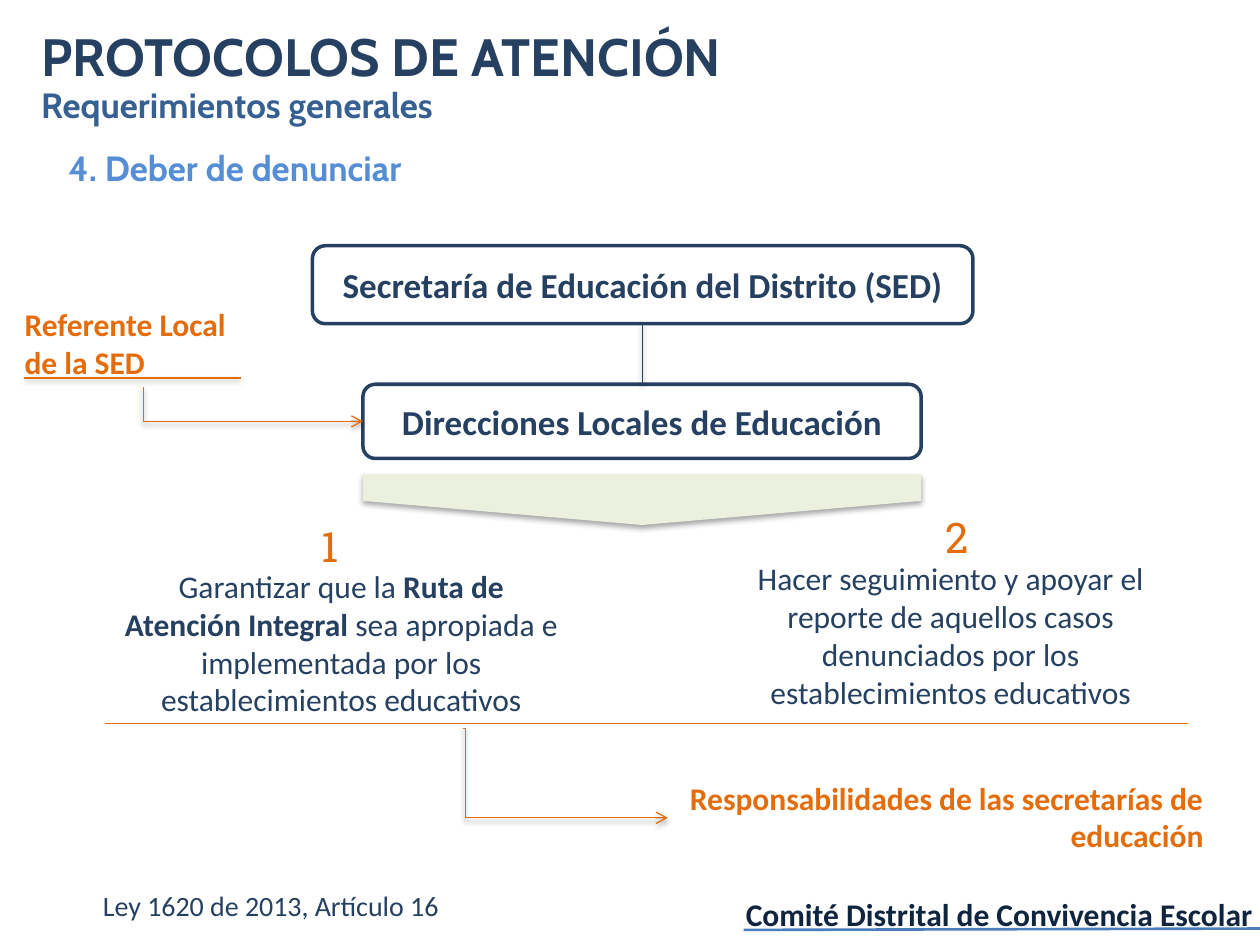
from dataclasses import dataclass

from lxml import etree
from pptx import Presentation
from pptx import util as u
from pptx.dml import color
from pptx.enum import shapes, text
from pptx.oxml import ns

Pt = u.Pt
Kind = shapes.MSO_SHAPE
Link = shapes.MSO_CONNECTOR
Side = text.PP_ALIGN


@dataclass(frozen=True)
class Theme:
    navy: str = "254061"
    ink: str = "0F243E"
    steel: str = "376092"
    sky: str = "558ED5"
    rule: str = "4B7EBC"
    flame: str = "E46C0A"
    sage: str = "EBF1DE"
    white: str = "FFFFFF"
    head: str = "Cabin"
    body: str = "Calibri"
    digit: str = "Roboto Slab"
    title: int = 30
    mark: int = 24
    large: int = 20
    base: int = 18
    small: int = 16


def rgb(code):
    return color.RGBColor.from_string(code)


def write(para, words, *, font, size, tint, bold=False):
    run = para.add_run()
    run.text = words
    run.font.name = font
    run.font.size = Pt(size)
    run.font.bold = bold
    run.font.color.rgb = rgb(tint)


def node(parent, tag, **attrs):
    child = etree.SubElement(parent, ns.qn(tag))
    for key, value in attrs.items():
        child.set(key, str(value))
    return child


def shade(item, alpha, dist):
    props = item._element.spPr
    effects = props.find(ns.qn("a:effectLst"))
    if effects is None:
        effects = node(props, "a:effectLst")
    if alpha:
        cast = node(effects, "a:outerShdw", blurRad=Pt(3.1), dist=Pt(dist),
                    dir=90 * 60000, algn="ctr", rotWithShape=0)
        tone = node(cast, "a:srgbClr", val="000000")
        node(tone, "a:alpha", val=alpha * 1000)


class Page:
    def __init__(self, slide, theme):
        self.slide = slide
        self.theme = theme

    def fill(self, para, words, **fmt):
        look = dict(font=self.theme.body, size=self.theme.base, tint=self.theme.navy) | fmt
        runs = [(words, look.pop("bold", False))] if isinstance(words, str) else words
        for part, bold in runs:
            write(para, part, bold=bold, **look)

    def label(self, words, x, y, w, h, side=Side.LEFT, wrap=True, **fmt):
        frame = self.slide.shapes.add_textbox(Pt(x), Pt(y), Pt(w), Pt(h)).text_frame
        frame.word_wrap = wrap
        para = frame.paragraphs[0]
        para.alignment = side
        self.fill(para, words, **fmt)

    def shape(self, kind, x, y, w, h, tint):
        item = self.slide.shapes.add_shape(kind, Pt(x), Pt(y), Pt(w), Pt(h))
        item.shadow.inherit = False
        item.fill.solid()
        item.fill.fore_color.rgb = rgb(tint)
        return item

    def box(self, words, x, y, w, h):
        item = self.shape(Kind.FLOWCHART_ALTERNATE_PROCESS, x, y, w, h, self.theme.white)
        item.line.color.rgb = rgb(self.theme.navy)
        item.line.width = Pt(2)
        frame = item.text_frame
        frame.word_wrap = True
        frame.vertical_anchor = text.MSO_ANCHOR.MIDDLE
        frame.paragraphs[0].alignment = Side.CENTER
        self.fill(frame.paragraphs[0], words, size=self.theme.large, bold=True)

    def pointer(self, x, y, w, h):
        item = self.shape(Kind.PENTAGON, x + (w - h) / 2, y + (h - w) / 2, h, w, self.theme.sage)
        item.line.fill.background()
        item.rotation = 90
        item.adjustments[0] = 0.475
        shade(item, 35, 1.8)

    def line(self, x1, y1, x2, y2, tint, width=0.75, kind=Link.STRAIGHT, alpha=38):
        item = self.slide.shapes.add_connector(kind, Pt(x1), Pt(y1), Pt(x2), Pt(y2))
        item.line.color.rgb = rgb(tint)
        item.line.width = Pt(width)
        shade(item, alpha, 1.6)
        return item

    def elbow(self, x1, y1, x2, y2, bend=None):
        if bend is None:
            midx, midy = (x1 + x2) / 2, (y1 + y2) / 2
            dx, dy = (x2 - x1) / 2, (y2 - y1) / 2
            ends = midx + dy, midy - dx, midx - dy, midy + dx
        else:
            ends = x1, y1, x2, y2
        item = self.line(*ends, self.theme.flame, kind=Link.ELBOW)
        props = item._element.spPr
        shape = props.find(ns.qn("a:prstGeom"))
        if bend is None:
            shape.set("prst", "bentConnector2")
            props.find(ns.qn("a:xfrm")).set("rot", str(270 * 60000))
        else:
            guides = shape.find(ns.qn("a:avLst"))
            node(guides, "a:gd", name="adj1", fmla=f"val {round(bend * 100000)}")
        node(props.find(ns.qn("a:ln")), "a:tailEnd", type="arrow")


def main():
    deck = Presentation()
    deck.slide_width, deck.slide_height = Pt(720), Pt(540)
    t = Theme()
    page = Page(deck.slides.add_slide(deck.slide_layouts[6]), t)

    page.label("PROTOCOLOS DE ATENCIÓN", 16.5, 10, 631, 44,
               font=t.head, size=t.title, bold=True)
    page.label("4. Deber de denunciar", 32, 80, 262, 32,
               font=t.head, size=t.large, tint=t.sky, bold=True)
    page.label("Requerimientos generales", 16.5, 44, 407.5, 32,
               font=t.head, size=t.large, tint=t.steel, bold=True)
    page.label("Ley 1620 de 2013, Artículo 16", 38, 504, 233.5, 26.5,
               side=Side.CENTER, size=t.small)

    page.box("Secretaría de Educación del Distrito (SED)", 178.5, 140.4, 377.5, 44.6)
    page.box("Direcciones Locales de Educación", 207.4, 219.6, 319, 42.4)
    page.label("Referente Local de la SED", 7, 170.6, 149, 51, tint=t.flame, bold=True)
    page.label([("Garantizar que la ", False), ("Ruta de Atención Integral", True),
                (" sea apropiada e implementada por los establecimientos educativos", False)],
               60, 320.4, 270, 94.3, side=Side.CENTER)
    page.label("Hacer seguimiento y apoyar el reporte de aquellos casos denunciados "
               "por los establecimientos educativos", 402.5, 316, 281.5, 94.3, side=Side.CENTER)

    page.elbow(82, 221.2, 207.4, 240.8)
    page.line(13.8, 216, 137.6, 216, t.flame)
    page.line(60, 413.4, 679, 413.4, t.flame)
    page.label("Responsabilidades de las secretarías de educación", 381.6, 441.4, 313.2, 51,
               side=Side.RIGHT, tint=t.flame, bold=True)
    page.elbow(264.4, 416.2, 381.6, 467.3, bend=0.013)

    page.pointer(207.4, 271, 319, 29)
    page.line(367, 185, 367, 219.6, t.navy)
    page.label("Comité Distrital de Convivencia Escolar", 417, 507.6, 306, 29,
               side=Side.RIGHT, wrap=False, tint=t.ink, bold=True)
    page.line(425, 531.4, 720, 530.6, t.rule, width=1.5, alpha=0)

    for mark, x, y in (("1", 176.4, 293.8), ("2", 533.5, 288.7)):
        page.label(mark, x, y, 47.5, 36, font=t.digit, size=t.mark, tint=t.flame)

    deck.save("out.pptx")


if __name__ == "__main__":
    main()
